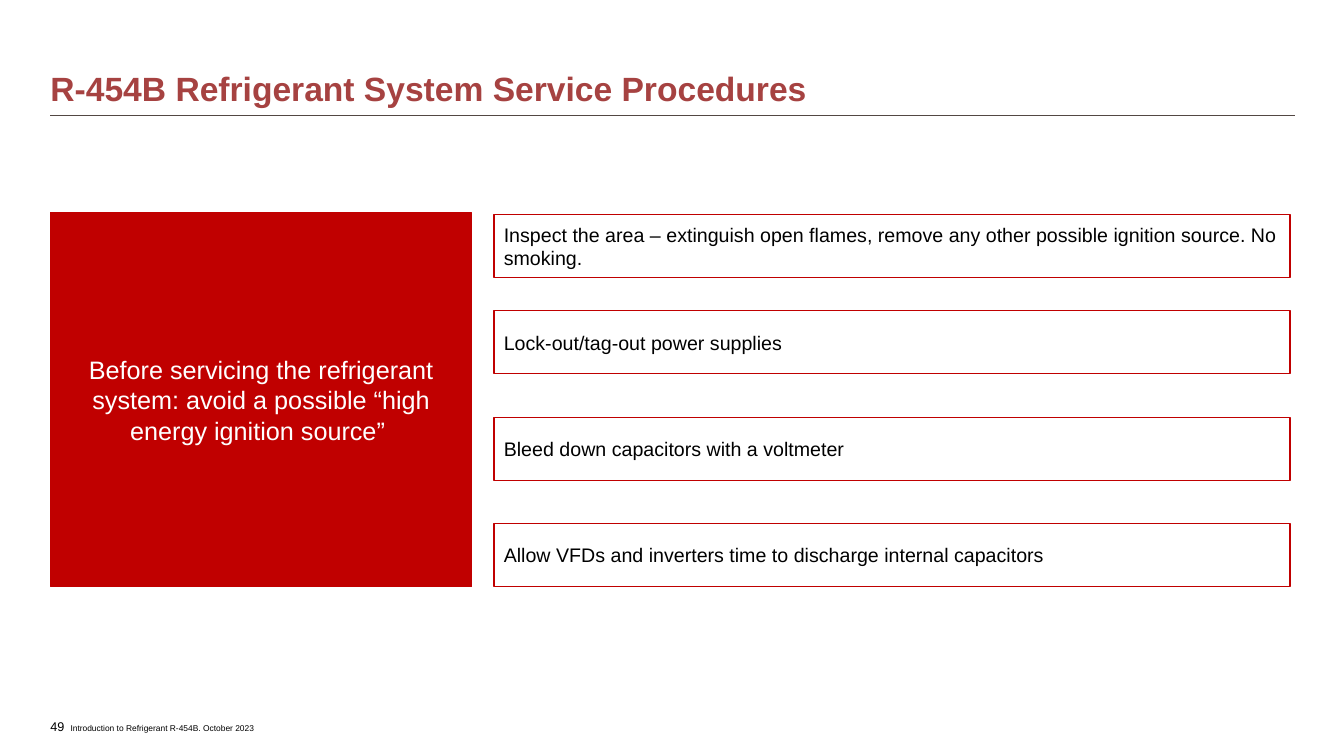
from lxml import etree
from pptx import Presentation
from pptx.dml.color import RGBColor
from pptx.enum.shapes import MSO_CONNECTOR, MSO_SHAPE
from pptx.enum.text import MSO_ANCHOR, PP_ALIGN
from pptx.oxml.ns import qn
from pptx.util import Pt

RECTANGLE = MSO_SHAPE.RECTANGLE
STRAIGHT = MSO_CONNECTOR.STRAIGHT
TOP, MIDDLE, BOTTOM = MSO_ANCHOR.TOP, MSO_ANCHOR.MIDDLE, MSO_ANCHOR.BOTTOM
LEFT, CENTER = PP_ALIGN.LEFT, PP_ALIGN.CENTER

TITLE = "R-454B Refrigerant System Service Procedures"
WARNING = "Before servicing the refrigerant system: avoid a possible “high energy ignition source” "
STEPS = [
    (153.3, "Inspect the area – extinguish open flames, remove any other possible ignition source. No smoking."),
    (222, "Lock-out/tag-out power supplies"),
    (298.3, "Bleed down capacitors with a voltmeter"),
    (374, "Allow VFDs and inverters time to discharge internal capacitors"),
]
PAGE_NUMBER = "49"
FOOTER = "Introduction to Refrigerant R-454B. October 2023"

COLORS = {
    "title": "A64241",
    "red": "C00000",
    "rule": "524743",
    "black": "000000",
    "white": "FFFFFF",
}
FONT = "Arial"
MARGIN = 36
CONTENT_WIDTH = 889.2
RULE_TOP = 82.8
STEP_LEFT, STEP_WIDTH, STEP_HEIGHT = 352.8, 568.8, 45


def color(name):
    return RGBColor.from_string(COLORS[name])


def write(shape, text, size, color_name, anchor, align=LEFT, bold=False):
    frame = shape.text_frame
    frame.text = text
    frame.word_wrap = True
    frame.vertical_anchor = anchor
    paragraph = frame.paragraphs[0]
    paragraph.alignment = align
    font = paragraph.runs[0].font
    font.name = FONT
    font.size = Pt(size)
    font.bold = bold
    font.color.rgb = color(color_name)
    return paragraph


def add_label(slide, box, text, size, color_name, anchor, bold=False):
    label = slide.shapes.add_textbox(*map(Pt, box))
    frame = label.text_frame
    frame.margin_left = frame.margin_right = 0
    frame.margin_top = frame.margin_bottom = 0
    return write(label, text, size, color_name, anchor, bold=bold)


def add_panel(slide, box, text, size, color_name, align, fill=None):
    panel = slide.shapes.add_shape(RECTANGLE, *map(Pt, box))
    panel.shadow.inherit = False
    if fill:
        panel.fill.solid()
        panel.fill.fore_color.rgb = color(fill)
    else:
        panel.fill.background()
    panel.line.color.rgb = color("red")
    panel.line.width = Pt(1)
    write(panel, text, size, color_name, MIDDLE, align)


def add_rule(slide):
    rule = slide.shapes.add_connector(
        STRAIGHT, Pt(MARGIN), Pt(RULE_TOP), Pt(MARGIN + CONTENT_WIDTH), Pt(RULE_TOP)
    )
    rule.line.color.rgb = color("rule")
    rule.line.width = Pt(0.75)
    etree.SubElement(rule._element.spPr, qn("a:effectLst"))


def main():
    presentation = Presentation()
    presentation.slide_width = Pt(960)
    presentation.slide_height = Pt(540)
    slide = presentation.slides.add_slide(presentation.slide_layouts[6])

    add_rule(slide)
    add_label(slide, (MARGIN, 510.5, 28, 17.3), PAGE_NUMBER, 9, "black", MIDDLE)
    add_label(slide, (50.4, 516.2, 158.4, 7.2), FOOTER, 6, "black", TOP)
    title = add_label(
        slide, (MARGIN, 15.1, CONTENT_WIDTH, 62.6), TITLE, 24, "title", BOTTOM, bold=True
    )
    title.line_spacing = 0.9

    add_panel(slide, (MARGIN, 152, 301, 267), WARNING, 18, "white", CENTER, fill="red")
    for top, step in STEPS:
        add_panel(slide, (STEP_LEFT, top, STEP_WIDTH, STEP_HEIGHT), step, 14, "black", LEFT)

    presentation.save("out.pptx")


if __name__ == "__main__":
    main()
